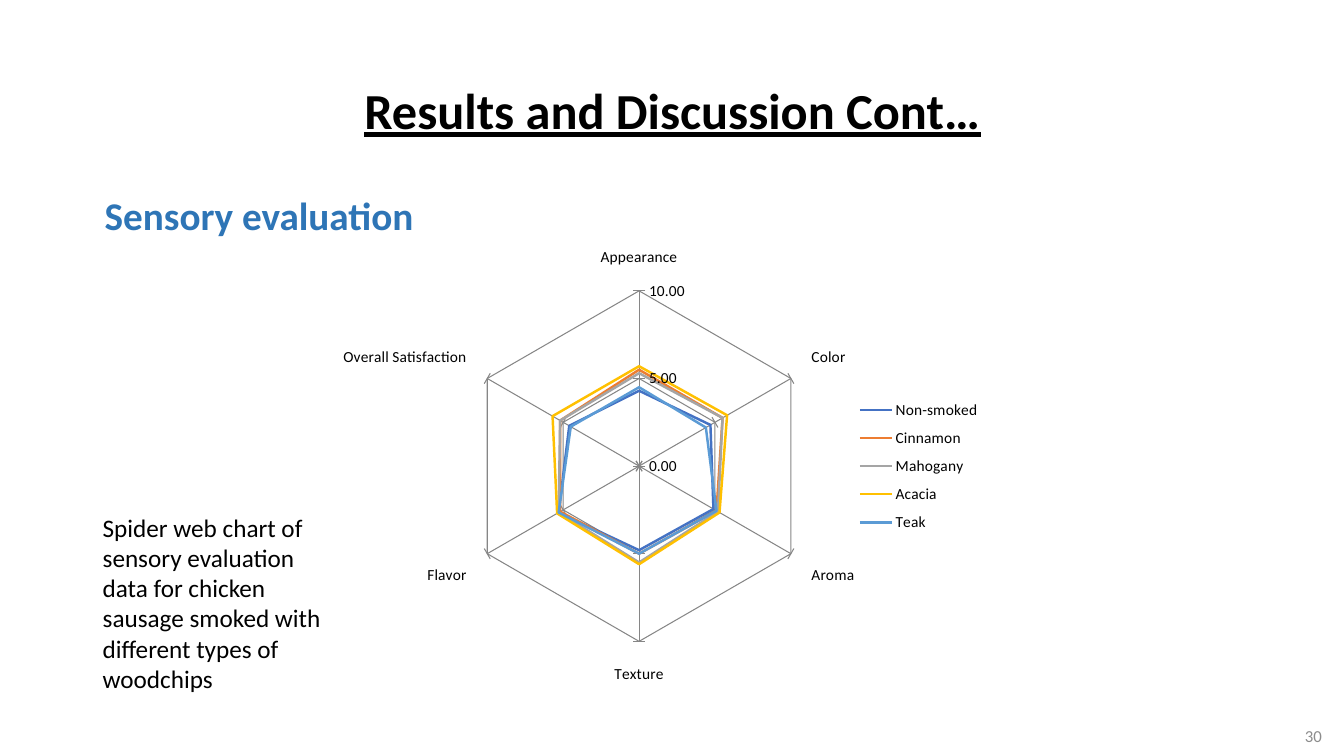
import pptx
import pptx.chart.data
import pptx.dml.color
import pptx.enum.chart
import pptx.enum.text
import pptx.oxml
import pptx.oxml.ns
import pptx.util

Inches, Pt = pptx.util.Inches, pptx.util.Pt
Align, Anchor = pptx.enum.text.PP_ALIGN, pptx.enum.text.MSO_ANCHOR
Tick = pptx.enum.chart.XL_TICK_MARK

COLORS = {
    "ink": "000000", "head": "2E75B6", "page": "8C8C8C", "grid": "868686",
    "Non-smoked": "4472C4", "Cinnamon": "ED7D31", "Mahogany": "A5A5A5",
    "Acacia": "FFC000", "Teak": "5B9BD5",
}
TRAITS = ["Appearance", "Color", "Aroma", "Texture", "Flavor", "Overall Satisfaction"]
SCORES = {
    "Non-smoked": [4.3, 4.7, 4.9, 4.8, 5.3, 4.6],
    "Cinnamon": [5.5, 5.5, 5.1, 5, 5.2, 5.2],
    "Mahogany": [5.3, 5.5, 5.2, 5.5, 5.3, 5.2],
    "Acacia": [5.7, 5.8, 5.3, 5.6, 5.4, 5.7],
    "Teak": [4.5, 4.4, 5.1, 5, 5.3, 4.5],
}


class Deck:
    font = "Calibri"

    def __init__(self):
        self.prs = pptx.Presentation()
        self.prs.slide_width, self.prs.slide_height = Inches(13.33), Inches(7.5)
        self.slide = self.prs.slides.add_slide(self.prs.slide_layouts[6])

    def color(self, name):
        return pptx.dml.color.RGBColor.from_string(COLORS[name])

    def style(self, font, size, color="ink"):
        font.name, font.size = self.font, Pt(size)
        font.color.rgb = self.color(color)

    def line(self, line, color, width):
        line.color.rgb = self.color(color)
        line.width = Pt(width)

    def text(self, box, words, size, color="ink", align=Align.LEFT,
             anchor=Anchor.TOP, bold=False, under=False, space=1.0):
        frame = self.slide.shapes.add_textbox(*map(Inches, box)).text_frame
        frame.word_wrap = True
        frame.vertical_anchor = anchor
        para = frame.paragraphs[0]
        para.alignment, para.line_spacing = align, space
        run = para.add_run()
        run.text = words
        self.style(run.font, size, color)
        run.font.bold, run.font.underline = bold, under

    def place(self, part, index, mode, **box):
        """Fix a chart part at fractions of the chart area."""
        for old in part.findall(pptx.oxml.ns.qn("c:layout")):
            part.remove(old)
        rows = "".join(f'<c:{key} val="{val}"/>' for key, val in box.items())
        part.insert(index, pptx.oxml.parse_xml(
            f'<c:layout {pptx.oxml.ns.nsdecls("c")}><c:manualLayout>{mode}'
            f'<c:xMode val="edge"/><c:yMode val="edge"/>{rows}'
            '</c:manualLayout></c:layout>'))

    def axis(self, axis, tick):
        axis.has_major_gridlines = True
        axis.major_tick_mark, axis.minor_tick_mark = tick, Tick.NONE
        self.line(axis.major_gridlines.format.line, "grid", 0.75)
        self.line(axis.format.line, "grid", 0.75)
        self.style(axis.tick_labels.font, 11)

    def radar(self, box, cats, rows):
        data = pptx.chart.data.CategoryChartData(number_format="0.00")
        data.categories = cats
        for name, vals in rows.items():
            data.add_series(name, vals)
        chart = self.slide.shapes.add_chart(
            pptx.enum.chart.XL_CHART_TYPE.RADAR, *map(Inches, box), data).chart
        chart.has_title = False
        self.style(chart.font, 10)
        chart.plots[0].vary_by_categories = False
        for row in chart.plots[0].series:
            self.line(row.format.line, row.name, 1.75)
            row.marker.style = pptx.enum.chart.XL_MARKER_STYLE.NONE

        self.axis(chart.category_axis, Tick.OUTSIDE)
        scale = chart.value_axis
        self.axis(scale, Tick.CROSS)
        scale.minimum_scale, scale.maximum_scale, scale.major_unit = 0, 10, 5
        scale.tick_labels.number_format = "0.00"
        scale.tick_labels.number_format_is_linked = False

        chart.has_legend = True
        legend = chart.legend
        legend.position = pptx.enum.chart.XL_LEGEND_POSITION.RIGHT
        legend.include_in_layout = False
        self.style(legend.font, 11)
        root = chart.element
        self.place(root.xpath(".//c:plotArea")[0], 0, '<c:layoutTarget val="inner"/>',
                   x=0.25, y=0.12, w=0.42, h=0.76)
        self.place(root.xpath(".//c:legend")[0], 1, "", x=0.71, y=0.34, w=0.17, h=0.32)


def main():
    deck = Deck()
    deck.text((0.92, 0.4, 11.5, 1.45), "Results and Discussion Cont…", 36,
              align=Align.CENTER, anchor=Anchor.MIDDLE, bold=True, under=True, space=0.9)
    deck.text((10.21, 7.1, 3, 0.4), "30", 12, "page", Align.RIGHT, Anchor.MIDDLE)
    deck.text((0.94, 1.85, 9, 0.57), "Sensory evaluation", 28, "head",
              Align.JUSTIFY, bold=True)
    deck.text((0.92, 5.03, 2.5, 1.92),
              "Spider web chart of sensory evaluation data for chicken sausage "
              "smoked with different types of woodchips", 18)
    deck.radar((2.53, 2.3, 8.28, 4.65), TRAITS, SCORES)
    deck.prs.save("out.pptx")


if __name__ == "__main__":
    main()
